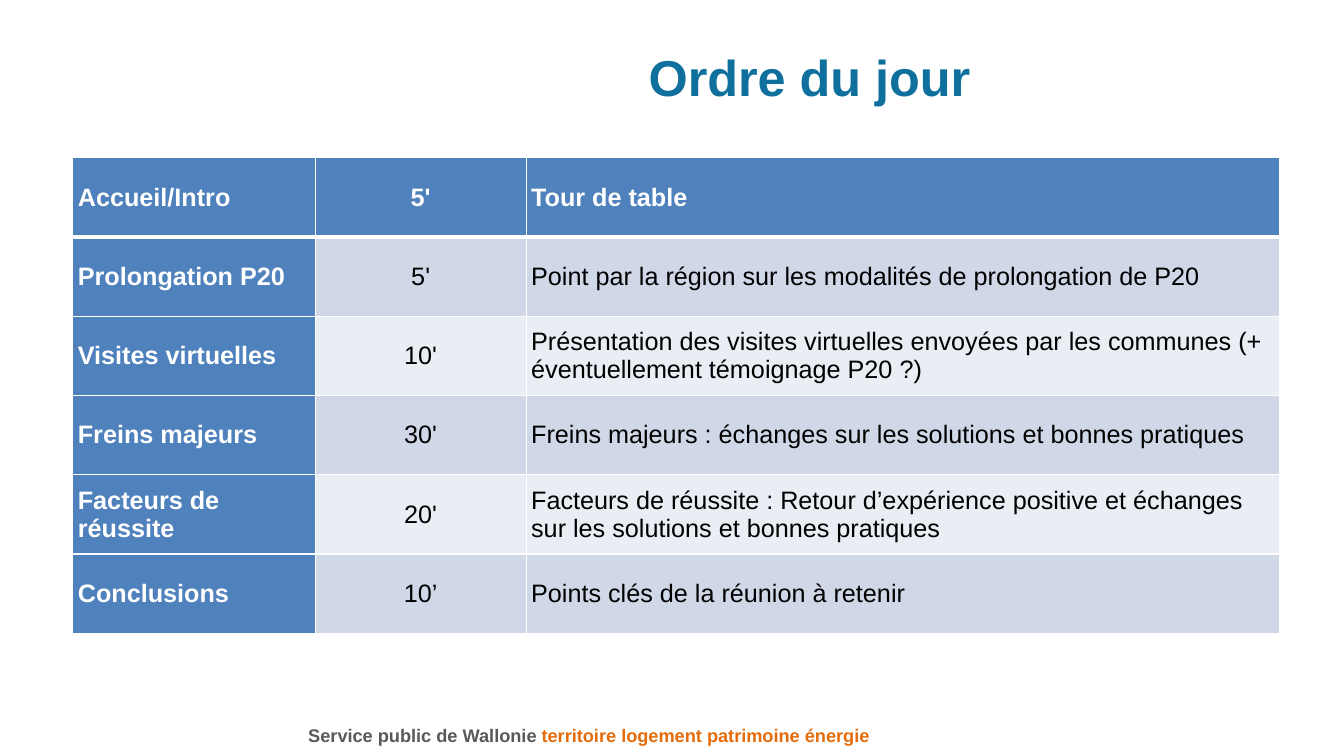
"""Build the agenda slide: a title, a timed table and a footer."""
from dataclasses import dataclass

from lxml import etree
from pptx import Presentation
from pptx.dml.color import RGBColor
from pptx.enum.text import MSO_ANCHOR, MSO_AUTO_SIZE, PP_ALIGN
from pptx.oxml.ns import qn
from pptx.slide import Slide
from pptx.table import _Cell
from pptx.text.text import TextFrame, _Paragraph
from pptx.util import Emu, Inches, Pt

LEFT, CENTER, RIGHT = PP_ALIGN.LEFT, PP_ALIGN.CENTER, PP_ALIGN.RIGHT
MIDDLE = MSO_ANCHOR.MIDDLE
FIT = MSO_AUTO_SIZE.SHAPE_TO_FIT_TEXT
FIXED = MSO_AUTO_SIZE.NONE

WHITE = RGBColor(0xFF, 0xFF, 0xFF)
BLACK = RGBColor(0x00, 0x00, 0x00)
BLUE = RGBColor(0x4F, 0x81, 0xBD)
DARK = RGBColor(0xD0, 0xD8, 0xE8)
LIGHT = RGBColor(0xE9, 0xED, 0xF4)
TEAL = RGBColor(0x0F, 0x70, 0x9E)
GREY = RGBColor(0x59, 0x59, 0x59)
ORANGE = RGBColor(0xE4, 0x6C, 0x0A)

WIDTH, HEIGHT = Inches(13.33), Inches(7.5)
COLS = (18.03, 15.7, 56.07)
ROW = 10.49
ALIGNS = (LEFT, CENTER, LEFT)
THIN, THICK = Pt(1), Pt(3)
INSETS = {
    "margin_left": Inches(0.05),
    "margin_right": Inches(0.05),
    "margin_top": 0,
    "margin_bottom": 0,
    "vertical_anchor": MIDDLE,
}


@dataclass(frozen=True)
class Item:
    """One line of the agenda."""
    topic: str
    time: str
    detail: str


@dataclass(frozen=True)
class Box:
    """A place on the slide, in percent of its size."""
    left: float
    top: float
    width: float
    height: float

    def place(self) -> dict[str, Emu]:
        """Return the box as shape lengths."""
        return {
            "left": across(self.left),
            "top": down(self.top),
            "width": across(self.width),
            "height": down(self.height),
        }


AGENDA = (
    Item("Accueil/Intro", "5'", "Tour de table"),
    Item("Prolongation P20", "5'",
         "Point par la région sur les modalités de prolongation de P20"),
    Item("Visites virtuelles", "10'",
         "Présentation des visites virtuelles envoyées par les communes "
         "(+ éventuellement témoignage P20 ?)"),
    Item("Freins majeurs", "30'",
         "Freins majeurs : échanges sur les solutions et bonnes pratiques"),
    Item("Facteurs de réussite", "20'",
         "Facteurs de réussite : Retour d’expérience positive et échanges "
         "sur les solutions et bonnes pratiques"),
    Item("Conclusions", "10’", "Points clés de la réunion à retenir"),
)
TITLE = Box(20.48, 1.73, 79.52, 16.67)
TABLE = Box(5.42, 20.85, sum(COLS), ROW * len(AGENDA))
FOOTER = Box(19.28, 95.2, 46.14, 4.27)


def across(share: float) -> Emu:
    """Return a percentage of the slide's width."""
    return Emu(round(WIDTH * share / 100))


def down(share: float) -> Emu:
    """Return a percentage of the slide's height."""
    return Emu(round(HEIGHT * share / 100))


def assign(target: object, values: dict[str, object]) -> None:
    """Set each named attribute of the target."""
    for name, value in values.items():
        setattr(target, name, value)


def write(line: _Paragraph, text: str, size: int, color: RGBColor,
          bold: bool = True) -> None:
    """Add a formatted run to a paragraph."""
    run = line.add_run()
    run.text = text
    assign(run.font, {"name": "Arial", "size": Pt(size), "bold": bold})
    run.font.color.rgb = color


def border(cell: _Cell, row: int) -> None:
    """Draw white edges, thick below the first row."""
    edges = {
        "L": THIN,
        "R": THIN,
        "T": THICK if row == 1 else THIN,
        "B": THICK if row == 0 else THIN,
    }
    props = cell._tc.get_or_add_tcPr()
    for side, width in edges.items():
        edge = etree.SubElement(props, qn(f"a:ln{side}"), w=str(width))
        fill = etree.SubElement(edge, qn("a:solidFill"))
        etree.SubElement(fill, qn("a:srgbClr"), val=str(WHITE))


def add_title(slide: Slide) -> None:
    """Place and fill the title."""
    title = slide.shapes.title
    assign(title, TITLE.place())
    frame: TextFrame = title.text_frame
    assign(frame, {"word_wrap": True, "vertical_anchor": MIDDLE,
                   "auto_size": FIXED})
    line = frame.paragraphs[0]
    line.alignment = CENTER
    write(line, "Ordre du jour", 36, TEAL)


def add_agenda(slide: Slide) -> None:
    """Draw the agenda table."""
    table = slide.shapes.add_table(
        len(AGENDA), len(COLS), **TABLE.place()).table
    for column, share in zip(table.columns, COLS):
        column.width = across(share)
    for row, item in enumerate(AGENDA):
        table.rows[row].height = down(ROW)
        band = DARK if row % 2 else LIGHT
        for col, text in enumerate((item.topic, item.time, item.detail)):
            cell = table.cell(row, col)
            head = row == 0 or col == 0
            assign(cell, INSETS)
            border(cell, row)
            cell.fill.solid()
            cell.fill.fore_color.rgb = BLUE if head else band
            line = cell.text_frame.paragraphs[0]
            line.alignment = ALIGNS[col]
            write(line, text, 18, WHITE if head else BLACK, head)


def add_footer(slide: Slide) -> None:
    """Write the two-colour footer."""
    frame = slide.shapes.add_textbox(**FOOTER.place()).text_frame
    assign(frame, {"word_wrap": True, "auto_size": FIT})
    line = frame.paragraphs[0]
    line.alignment = RIGHT
    write(line, "Service public de Wallonie ", 13, GREY)
    write(line, "territoire logement patrimoine énergie", 13, ORANGE)


def main() -> None:
    """Build and save the slide."""
    deck = Presentation()
    assign(deck, {"slide_width": WIDTH, "slide_height": HEIGHT})
    slide = deck.slides.add_slide(deck.slide_layouts[5])
    add_footer(slide)
    add_agenda(slide)
    add_title(slide)
    deck.save("out.pptx")


if __name__ == "__main__":
    main()
